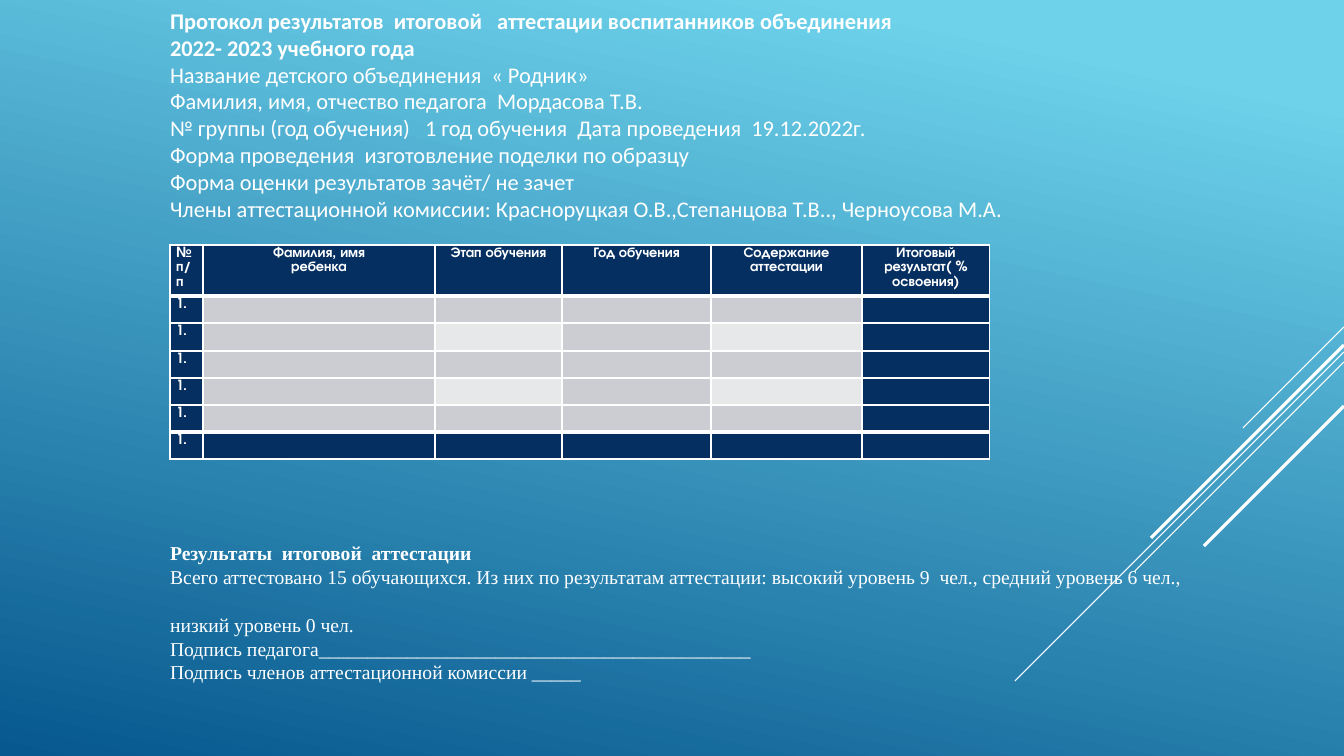
from lxml import etree
from pptx import Presentation
from pptx import util as u
from pptx.dml.color import RGBColor
from pptx.enum import shapes, text
from pptx.oxml.ns import qn

PX = 914400 / 100.8
COLORS = {"white": "FFFFFF", "navy": "052F61", "grey": "CCCDD2", "pale": "E7E8EA",
          "sky": "6ED2EB", "deep": "06588E"}
TABLE_FONT = "TeX Gyre Adventor"
HEADING = [
    "Протокол результатов  итоговой   аттестации воспитанников объединения",
    "2022- 2023 учебного года",
    "Название детского объединения  « Родник»",
    "Фамилия, имя, отчество педагога  Мордасова Т.В.",
    "№ группы (год обучения)   1 год обучения  Дата проведения  19.12.2022г.",
    "Форма проведения  изготовление поделки по образцу",
    "Форма оценки результатов зачёт/ не зачет",
    "Члены аттестационной комиссии: Красноруцкая О.В.,Степанцова Т.В.., Черноусова М.А.",
    "_________________",
]
RESULTS = [
    "Результаты  итоговой  аттестации",
    "Всего аттестовано 15 обучающихся. Из них по результатам аттестации: "
    "высокий уровень 9  чел., средний уровень 6 чел.,",
    "низкий уровень 0 чел.",
    "Подпись педагога____________________________________________",
    "Подпись членов аттестационной комиссии _____",
]
COLUMNS = [(33, ["№", "п/п"]), (232, ["Фамилия, имя", "ребенка"]), (127, ["Этап обучения"]),
           (149, ["Год обучения"]), (151, ["Содержание", "аттестации"]),
           (128, ["Итоговый", "результат( % освоения)"])]
ROW_HEIGHTS = [51, 27, 28, 27, 27, 27, 27]
RAYS = [(327, 101, 0.75), (352, 329, 0.75), (362, 209, 0.75), (345, 193, 2.25), (406, 140, 2.25)]


def px(n):
    """Turn pixels into EMU."""
    return u.Emu(round(n * PX))


def rgb(name):
    """Look up a named colour."""
    return RGBColor.from_string(COLORS[name])


def write(tf, lines, font, size, bold=0, align=text.PP_ALIGN.LEFT, spacing=1.0, gaps=()):
    """Fill a frame with paragraphs, the first `bold` of them bold, with a line's gap before `gaps`."""
    for i, line in enumerate(lines):
        p = tf.paragraphs[0] if i == 0 else tf.add_paragraph()
        p.alignment, p.line_spacing = align, spacing
        p.space_before = spacing if i in gaps else u.Pt(0)
        r = p.add_run()
        r.text = line
        r.font.name, r.font.size, r.font.bold = font, u.Pt(size), i < bold
        r.font.color.rgb = rgb("white")


def frame(sp, x, y, w, h):
    """Place a text shape and give it a plain top-anchored frame."""
    sp.left, sp.top, sp.width, sp.height = map(px, (x, y, w, h))
    tf = sp.text_frame
    tf.word_wrap, tf.auto_size = True, text.MSO_AUTO_SIZE.NONE
    tf.vertical_anchor = text.MSO_ANCHOR.TOP
    tf.margin_left = tf.margin_right = tf.margin_top = tf.margin_bottom = 0
    return tf


def background(slide):
    """Paint the blue gradient."""
    fill = slide.background.fill
    fill.gradient()
    fill.gradient_angle = 258
    for stop, name, position in zip(fill.gradient_stops, ("sky", "deep"), (0.1, 1.0)):
        stop.color.rgb, stop.position = rgb(name), position


def rays(slide, right):
    """Draw the diagonal lines that run down from the right edge."""
    for top, run, width in RAYS:
        line = slide.shapes.add_connector(shapes.MSO_CONNECTOR.STRAIGHT, px(right), px(top),
                                          px(right - run), px(top + run))
        line.line.color.rgb, line.line.width = rgb("white"), u.Pt(width)
        etree.SubElement(line._element.spPr, qn("a:effectLst"))


def borders(cell, top, bottom):
    """Give a cell white borders, in points."""
    tc_pr = cell._tc.get_or_add_tcPr()
    for i, (side, width) in enumerate((("L", 1), ("R", 1), ("T", top), ("B", bottom))):
        ln = etree.Element(qn(f"a:ln{side}"), w=str(u.Pt(width)))
        fill = etree.SubElement(ln, qn("a:solidFill"))
        etree.SubElement(fill, qn("a:srgbClr"), val=COLORS["white"])
        tc_pr.insert(i, ln)


def cell_color(row, col, last_row, last_col):
    """Choose navy for the outer cells and grey bands inside."""
    if row in (0, last_row) or col in (0, last_col):
        return "navy"
    return "pale" if row % 2 == 0 and col % 2 == 0 else "grey"


def protocol_table(slide, x, y):
    """Build the table of pupils."""
    last_row, last_col = len(ROW_HEIGHTS) - 1, len(COLUMNS) - 1
    width = sum(w for w, _ in COLUMNS)
    table = slide.shapes.add_table(last_row + 1, last_col + 1, px(x), px(y), px(width),
                                   px(sum(ROW_HEIGHTS))).table
    for col, (w, _) in enumerate(COLUMNS):
        table.columns[col].width = px(w)
    for row, height in enumerate(ROW_HEIGHTS):
        table.rows[row].height = px(height)
        for col, (_, header) in enumerate(COLUMNS):
            cell = table.cell(row, col)
            cell.margin_left = cell.margin_right = px(6)
            cell.margin_top = cell.margin_bottom = 0
            cell.fill.solid()
            cell.fill.fore_color.rgb = rgb(cell_color(row, col, last_row, last_col))
            borders(cell, 3 if row in (1, last_row) else 1, 3 if row in (0, last_row - 1) else 1)
            lines = header if row == 0 else ["1."] if col == 0 else []
            align = text.PP_ALIGN.CENTER if col else text.PP_ALIGN.JUSTIFY
            write(cell.text_frame, lines, TABLE_FONT, 10, bold=2, align=align, spacing=1.15)
            if not lines:
                cell.text_frame.paragraphs[0]._p.get_or_add_endParaRPr().set("sz", "1000")


def main():
    """Build and save the slide."""
    prs = Presentation()
    prs.slide_width, prs.slide_height = px(1344), px(756)
    slide = prs.slides.add_slide(prs.slide_layouts[5])
    background(slide)
    rays(slide, 1344)
    protocol_table(slide, 170, 245)
    write(frame(slide.shapes.title, 170, 7, 930, 245), HEADING, "Calibri", 16, bold=2)
    box = slide.shapes.add_textbox(0, 0, 0, 0)
    write(frame(box, 170, 541, 1029, 145), RESULTS, "Times New Roman", 14, bold=1,
          spacing=u.Pt(17), gaps=(2,))
    prs.save("out.pptx")


if __name__ == "__main__":
    main()
